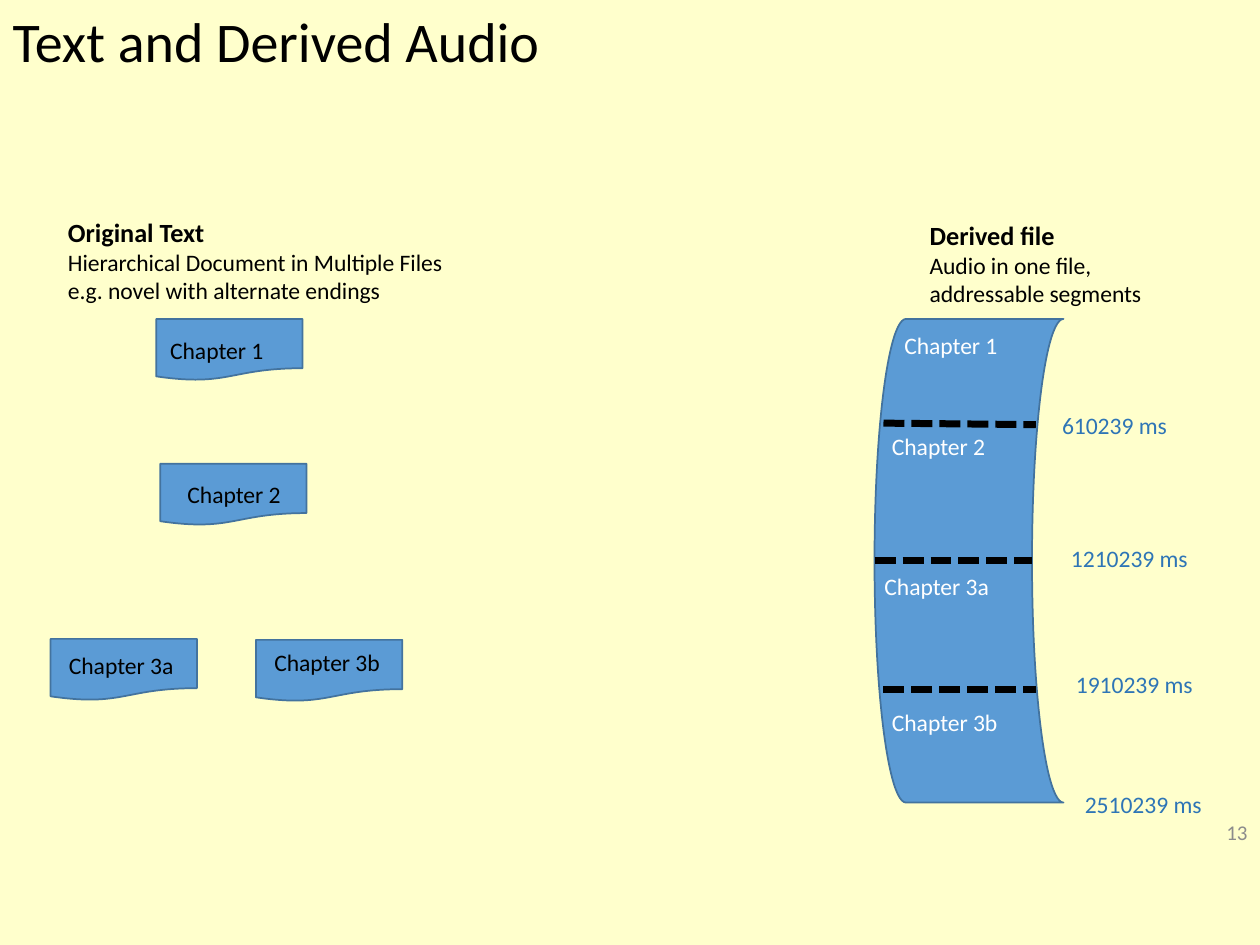
from lxml import etree
from pptx import Presentation
from pptx import util as u
from pptx.dml.color import RGBColor
from pptx.enum import dml, shapes, text
from pptx.oxml.ns import qn

Cm, Pt = u.Cm, u.Pt
FONT = "Calibri"
BLACK, WHITE, BLUE, EDGE, TIME = "000000", "FFFFFF", "5B9BD5", "43739E", "2E75B6"


def paint(color_format, color):
    color_format.rgb = RGBColor.from_string(color)


def write(left, top, width, height, lines, color, size=13.5, heading=None):
    """Add an unwrapped text box; an optional heading line is bold and larger."""
    box = slide.shapes.add_textbox(Cm(left), Cm(top), Cm(width), Cm(height))
    frame = box.text_frame
    frame.word_wrap = False
    frame.text = "\n".join([heading, *lines] if heading else lines)
    for number, paragraph in enumerate(frame.paragraphs):
        is_heading = heading is not None and number == 0
        paragraph.font.name = FONT
        paragraph.font.size = Pt(15 if is_heading else size)
        paragraph.font.bold = is_heading
        paint(paragraph.font.color, color)
    return frame


prs = Presentation()
prs.slide_width, prs.slide_height = Cm(25.4), Cm(19.05)
slide = prs.slides.add_slide(prs.slide_layouts[5])
slide.background.fill.solid()
paint(slide.background.fill.fore_color, "FFFFCC")

# Title
title = slide.shapes.title
title.left, title.top, title.width, title.height = Cm(0), Cm(0.03), Cm(20.96), Cm(1.73)
title.text_frame.text = "Text and Derived Audio"
title.text_frame.vertical_anchor = text.MSO_ANCHOR.MIDDLE
heading = title.text_frame.paragraphs[0]
heading.alignment = text.PP_ALIGN.LEFT
heading.line_spacing = 0.9
heading.font.name, heading.font.size = FONT, Pt(32)
paint(heading.font.color, BLACK)

# Slide number
page = write(23.65, 16.48, 1.75, 0.61, ["13"], "8C8C8C", 12)
page.word_wrap = True
page.vertical_anchor = text.MSO_ANCHOR.MIDDLE
page.paragraphs[0].alignment = text.PP_ALIGN.RIGHT

# Column captions
write(1.12, 4.24, 8.18, 2.06,
      ["Hierarchical Document in Multiple Files", "e.g. novel with alternate endings"],
      BLACK, heading="Original Text")
write(18.49, 4.29, 4.85, 2.06, ["Audio in one file,", "addressable segments"],
      BLACK, heading="Derived file")

# Chapter files and the audio file
DOCUMENT = shapes.MSO_SHAPE.FLOWCHART_DOCUMENT
STORAGE = shapes.MSO_SHAPE.FLOWCHART_STORED_DATA
files = [
    (DOCUMENT, 3.15, 6.43, 2.95, 1.24),
    (DOCUMENT, 3.23, 9.35, 2.95, 1.24),
    (DOCUMENT, 1.02, 12.88, 2.95, 1.24),
    (DOCUMENT, 5.16, 12.9, 2.95, 1.24),
    (STORAGE, 17.63, 6.43, 3.81, 9.75),
]
for kind, *place in files:
    file = slide.shapes.add_shape(kind, *map(Cm, place))
    file.shadow.inherit = False
    file.fill.solid()
    paint(file.fill.fore_color, BLUE)
    paint(file.line.color, EDGE)
    file.line.width = Pt(1)

# Segment boundaries in the audio file
for boundary in [(17.81, 8.53, 20.88, 8.56), (17.63, 11.3, 20.8, 11.3), (17.81, 13.89, 20.88, 13.89)]:
    cut = slide.shapes.add_connector(shapes.MSO_CONNECTOR.STRAIGHT, *map(Cm, boundary))
    paint(cut.line.color, BLACK)
    cut.line.width = Pt(4)
    cut.line.dash_style = dml.MSO_LINE.SQUARE_DOT
    etree.SubElement(cut._element.spPr, qn("a:effectLst"))

# Chapter names (in the text files, then in the audio) and segment end times
chapters = [
    ("Chapter 1", 2.41, (3.18, 6.65), (17.98, 6.55)),
    ("Chapter 2", 2.41, (3.53, 9.55), (17.73, 8.59)),
    ("Chapter 3a", 2.67, (1.14, 13), (17.58, 11.4)),
    ("Chapter 3b", 2.67, (5.28, 12.93), (17.73, 14.15)),
]
for chapter, width, in_text, in_audio in chapters:
    write(*in_text, width, 0.84, [chapter], BLACK)
    write(*in_audio, width, 0.84, [chapter], WHITE)

for end_time, left, top, width in [
    ("610239 ms", 21.16, 8.15, 2.67),
    ("1210239 ms", 21.34, 10.85, 2.9),
    ("1910239 ms", 21.44, 13.39, 2.9),
    ("2510239 ms", 21.62, 15.8, 2.9),
]:
    write(left, top, width, 0.84, [end_time], TIME)

prs.save("out.pptx")
